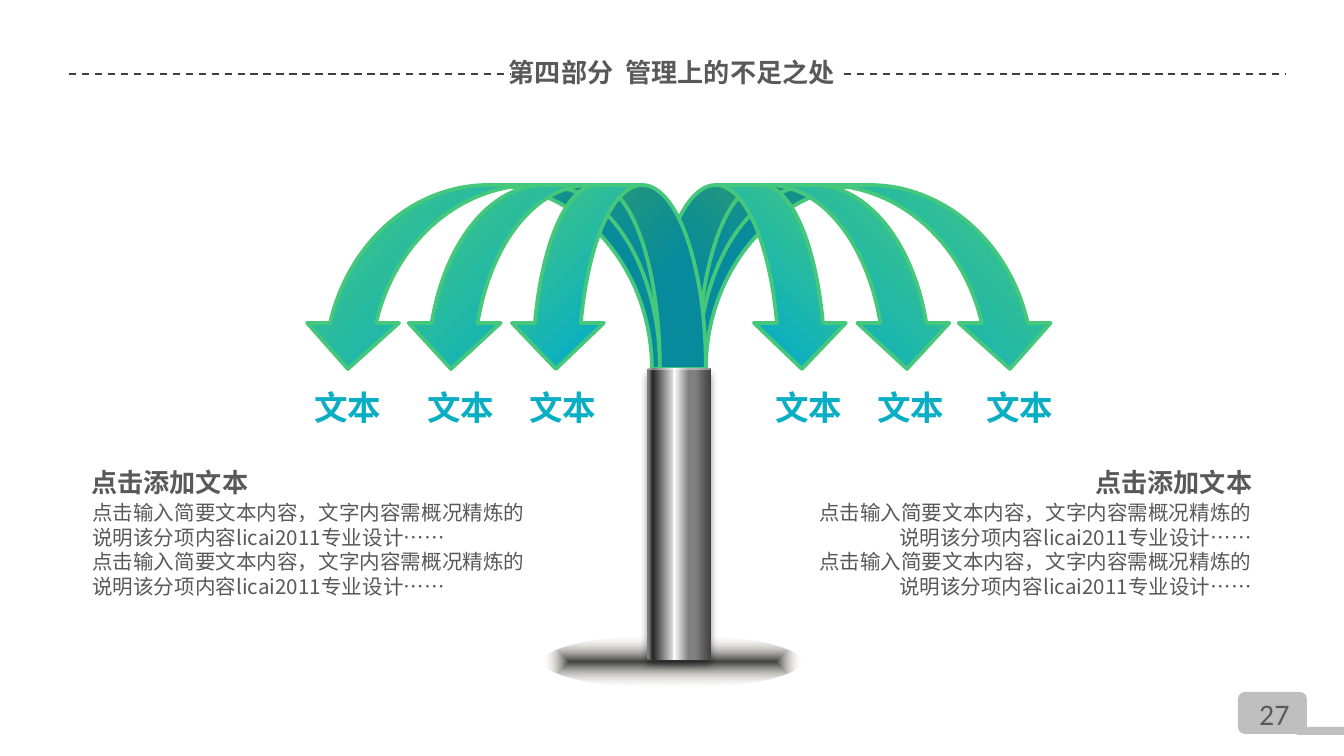
"""Build a slide with a fountain of six arrows above two text blocks."""
from lxml import etree
from pptx import Presentation
from pptx.dml.color import RGBColor
from pptx.enum.dml import MSO_LINE
from pptx.enum.shapes import MSO_CONNECTOR, MSO_SHAPE
from pptx.enum.text import MSO_ANCHOR, PP_ALIGN
from pptx.oxml.ns import qn
from pptx.util import Emu, Pt

LEFT, CENTER, RIGHT = PP_ALIGN.LEFT, PP_ALIGN.CENTER, PP_ALIGN.RIGHT
MIDDLE = MSO_ANCHOR.MIDDLE
DASH = MSO_LINE.DASH
STRAIGHT = MSO_CONNECTOR.STRAIGHT
RECTANGLE, ROUNDED = MSO_SHAPE.RECTANGLE, MSO_SHAPE.ROUNDED_RECTANGLE
ELLIPSE, CAN = MSO_SHAPE.OVAL, MSO_SHAPE.CAN
CURVED_ARROW = MSO_SHAPE.CURVED_DOWN_ARROW

BLACK = RGBColor(0x00, 0x00, 0x00)
NEAR_BLACK = RGBColor(0x26, 0x26, 0x26)
DARK = RGBColor(0x40, 0x40, 0x40)
GREY_TEXT = RGBColor(0x59, 0x59, 0x59)
GREY = RGBColor(0x80, 0x80, 0x80)
TAB_GREY = RGBColor(0xBF, 0xBF, 0xBF)
SILVER = RGBColor(0xD9, 0xD9, 0xD9)
CREAM = RGBColor(0xEE, 0xEC, 0xE1)
WHITE = RGBColor(0xFF, 0xFF, 0xFF)
TEAL = RGBColor(0x09, 0xAE, 0xC4)
GREEN = RGBColor(0x45, 0xC8, 0x7C)

CJK_FONT, NUMBER_FONT = "Noto Sans CJK SC", "Calibri"
LINE_HEIGHT = 1.2
TOP_INSET = 9

TITLE = "第四部分  管理上的不足之处"
PAGE_NUMBER = "27"
HEADING = "点击添加文本"
BODY = ["点击输入简要文本内容，文字内容需概况精炼的说明该分项内容licai2011专业设计……"] * 2
LABEL = "文本"
LABEL_LEFTS = [301, 414, 516, 762, 864, 973]
BLOCKS = [
    {"align": RIGHT, "heading": (1082, 457, 185, 46), "body": (801, 491, 464, 113)},
    {"align": LEFT, "heading": (78, 457, 185, 46), "body": (79, 491, 464, 138)},
]
TITLE_RULES = [(69, 511), (844, 1286)]
ARROWS = [(660, 396), (652, 301), (652, 196)]
MIRROR_AXIS = 679
ARROW_STOPS = [(35, TEAL, 100), (100, GREEN, 100)]
BASE_STOPS = [(0, DARK, 100), (100, CREAM, 0)]
PIPE_STOPS = [
    (2, GREY, 100), (9, NEAR_BLACK, 100), (40, SILVER, 100), (42, WHITE, 100),
    (65, GREY, 100), (75, GREY, 100), (100, DARK, 100),
]


def px(value):
    return Emu(round(value * 914400 / 134.4))


def add_node(parent, tag, **attributes):
    node = etree.SubElement(parent, qn(tag))
    for name, value in attributes.items():
        node.set(name, str(value))
    return node


def add_color(parent, color, opacity):
    node = add_node(parent, "a:srgbClr", val=color)
    if opacity < 100:
        add_node(node, "a:alpha", val=opacity * 1000)


def add_plain_shape(page, kind, frame, color):
    shape = page.shapes.add_shape(kind, *map(px, frame))
    shape.shadow.inherit = False
    shape.fill.solid()
    shape.fill.fore_color.rgb = color
    shape.line.fill.background()
    return shape


def set_gradient(shape, stops, angle=None):
    properties = shape.element.spPr
    gradient = etree.Element(qn("a:gradFill"), rotWithShape="1")
    stop_list = add_node(gradient, "a:gsLst")
    for position, color, opacity in stops:
        add_color(add_node(stop_list, "a:gs", pos=position * 1000), color, opacity)
    if angle is None:
        way = add_node(gradient, "a:path", path="shape")
        add_node(way, "a:fillToRect", l=50000, t=50000, r=50000, b=50000)
    else:
        add_node(gradient, "a:lin", ang=angle * 60000, scaled=0)
    properties.replace(properties.find(qn("a:solidFill")), gradient)


def format_paragraph(para, size, color, bold, align, font_name):
    para.alignment = align
    for span in para.runs:
        font = span.font
        font.name, font.size, font.bold = font_name, Pt(size), bold
        font.color.rgb = color
        add_node(font._element, "a:ea", typeface=font_name)


def add_text(page, frame, lines, size, color=GREY_TEXT, bold=False,
             align=LEFT, wrap=False, font_name=CJK_FONT):
    box = page.shapes.add_textbox(*map(px, frame))
    text_frame = box.text_frame
    text_frame.word_wrap = wrap
    text_frame.margin_top = px(TOP_INSET)
    text_frame.text = "\n".join(lines)
    for para in text_frame.paragraphs:
        para.line_spacing = Pt(size * LINE_HEIGHT)
        format_paragraph(para, size, color, bold, align, font_name)


def add_title(page):
    title = page.shapes.title
    title.left, title.top, title.width, title.height = map(px, (16, 47, 1312, 51))
    title.text_frame.text = TITLE
    title.text_frame.vertical_anchor = MIDDLE
    format_paragraph(title.text_frame.paragraphs[0], 14, GREY_TEXT, True, CENTER, CJK_FONT)
    for start, end in TITLE_RULES:
        rule = page.shapes.add_connector(STRAIGHT, px(start), px(74), px(end), px(74))
        rule.line.color.rgb = DARK
        rule.line.width = Pt(1)
        rule.line.dash_style = DASH
        add_node(rule.element.spPr, "a:effectLst")


def add_page_number(page):
    add_plain_shape(page, ROUNDED, (1238, 692, 69, 42), TAB_GREY)
    add_plain_shape(page, RECTANGLE, (1297, 727, 47, 8), TAB_GREY)
    add_text(page, (1246, 687, 65, 50), [PAGE_NUMBER], 16, font_name=NUMBER_FONT)


def add_arrow(page, left, width, flipped):
    if flipped:
        left = 2 * MIRROR_AXIS - left - width
    arrow = add_plain_shape(page, CURVED_ARROW, (left, 185, width, 184), TEAL)
    set_gradient(arrow, ARROW_STOPS, 315)
    arrow.line.color.rgb = GREEN
    arrow.line.width = Pt(2)
    if flipped:
        arrow.element.spPr.find(qn("a:xfrm")).set("flipH", "1")


def add_pipe(page):
    pipe = add_plain_shape(page, CAN, (647, 368, 64, 292), GREY)
    pipe.adjustments[0] = 0.03
    set_gradient(pipe, PIPE_STOPS, 0)
    effects = pipe.element.spPr.find(qn("a:effectLst"))
    shadow = add_node(effects, "a:outerShdw", blurRad=Pt(4), dist=Pt(3),
                      dir=90 * 60000, rotWithShape=0)
    add_color(shadow, BLACK, 40)


def main():
    deck = Presentation()
    deck.slide_width, deck.slide_height = px(1344), px(756)
    page = deck.slides.add_slide(deck.slide_layouts[5])
    add_page_number(page)
    add_title(page)
    base = add_plain_shape(page, ELLIPSE, (544, 636, 257, 52), DARK)
    set_gradient(base, BASE_STOPS)
    for block in BLOCKS:
        add_text(page, block["body"], BODY, 11, align=block["align"], wrap=True)
        add_text(page, block["heading"], [HEADING], 14, bold=True)
    for flipped in (False, True):
        for left, width in ARROWS:
            add_arrow(page, left, width, flipped)
    add_pipe(page)
    for left in LABEL_LEFTS:
        add_text(page, (left, 378, 95, 54), [LABEL], 18, TEAL, True)
    deck.save("out.pptx")


if __name__ == "__main__":
    main()
